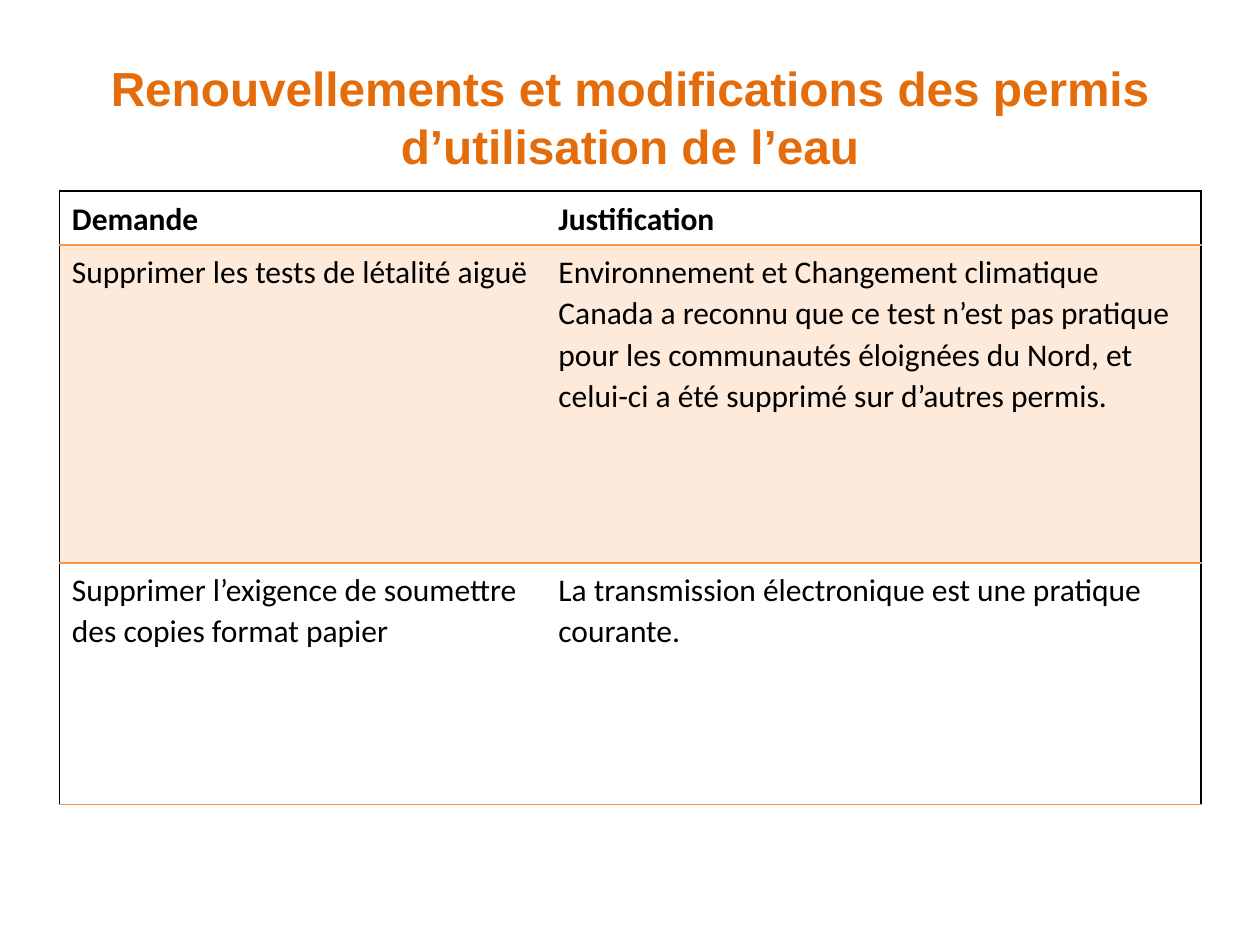
from dataclasses import dataclass
from pptx import Presentation
from pptx.dml.color import RGBColor as Rgb
from pptx.enum.text import MSO_ANCHOR as Anchor, MSO_AUTO_SIZE as Fit, PP_ALIGN as Align
from pptx.oxml.ns import qn
from pptx.util import Pt
from lxml.etree import SubElement as Sub


@dataclass(frozen=True)
class Theme:
    title: str = "E46C0A"
    text: str = "000000"
    edge: str = "000000"
    rule: str = "F79646"
    band_alpha: int = 20
    head_font: str = "Arial"
    body_font: str = "Calibri"
    head_size: float = 27.3
    body_size: float = 18
    plain: str = "{2D5ABB26-0587-4C30-8999-92F81FD0307C}"


THEME = Theme()
TITLE = "Renouvellements et modifications des permis d’utilisation de l’eau"
ROWS = [
    ("Demande", "Justification"),
    ("Supprimer les tests de létalité aiguë",
     "Environnement et Changement climatique Canada a reconnu que ce test n’est pas "
     "pratique pour les communautés éloignées du Nord, et celui-ci a été supprimé sur "
     "d’autres permis."),
    ("Supprimer l’exigence de soumettre des copies format papier",
     "La transmission électronique est une pratique courante."),
]
WIDTHS = (278, 374.4)
HEIGHTS = (30.6, 181.7, 138.2)


def style(font, name, size, color, bold):
    font.name, font.size, font.bold = name, Pt(size), bold
    font.color.rgb = Rgb.from_string(color)


def add_title(slide):
    title = slide.shapes.title
    title.left, title.top, title.width, title.height = Pt(0), Pt(21.6), Pt(720), Pt(90)
    frame = title.text_frame
    frame.text = TITLE
    frame.word_wrap, frame.auto_size = True, Fit.NONE
    frame.vertical_anchor = Anchor.MIDDLE
    para = frame.paragraphs[0]
    para.alignment = Align.CENTER
    style(para.runs[0].font, THEME.head_font, THEME.head_size, THEME.title, True)


def fill_cell(cell, text, bold):
    cell.text_frame.text = text
    para = cell.text_frame.paragraphs[0]
    para.line_spacing, para.space_after = 1.07, Pt(8)
    style(para.runs[0].font, THEME.body_font, THEME.body_size, THEME.text, bold)


def set_edges(cell, edges):
    props = cell._tc.get_or_add_tcPr()
    for side in "LRTB":
        if side in edges:
            line = Sub(props, qn(f"a:ln{side}"), w=str(Pt(1)))
            Sub(Sub(line, qn("a:solidFill")), qn("a:srgbClr"), val=edges[side])


def set_band(cell):
    cell.fill.solid()
    cell.fill.fore_color.rgb = Rgb.from_string(THEME.rule)
    color = cell._tc.tcPr.find(qn("a:solidFill")).find(qn("a:srgbClr"))
    Sub(color, qn("a:alpha"), val=str(THEME.band_alpha * 1000))


def add_grid(slide):
    frame = slide.shapes.add_table(len(ROWS), len(WIDTHS), Pt(33.9), Pt(109.2),
                                   Pt(sum(WIDTHS)), Pt(sum(HEIGHTS)))
    table = frame.table
    table.horz_banding = False
    table._tbl.tblPr.find(qn("a:tableStyleId")).text = THEME.plain
    for col, width in zip(table.columns, WIDTHS):
        col.width = Pt(width)
    for r, (row, height) in enumerate(zip(table.rows, HEIGHTS)):
        row.height = Pt(height)
        for c, cell in enumerate(row.cells):
            fill_cell(cell, ROWS[r][c], r == 0)
            edges = {"LR"[c]: THEME.edge}
            if r == 0:
                edges["T"] = THEME.edge
            if r != 1:
                edges["B"] = THEME.rule
            else:
                edges["T"] = THEME.rule
            set_edges(cell, edges)
            if r == 1:
                set_band(cell)
            else:
                cell.fill.background()


def main():
    deck = Presentation()
    deck.slide_width, deck.slide_height = Pt(720), Pt(540)
    slide = deck.slides.add_slide(deck.slide_layouts[5])
    add_title(slide)
    add_grid(slide)
    deck.save("out.pptx")


if __name__ == "__main__":
    main()
